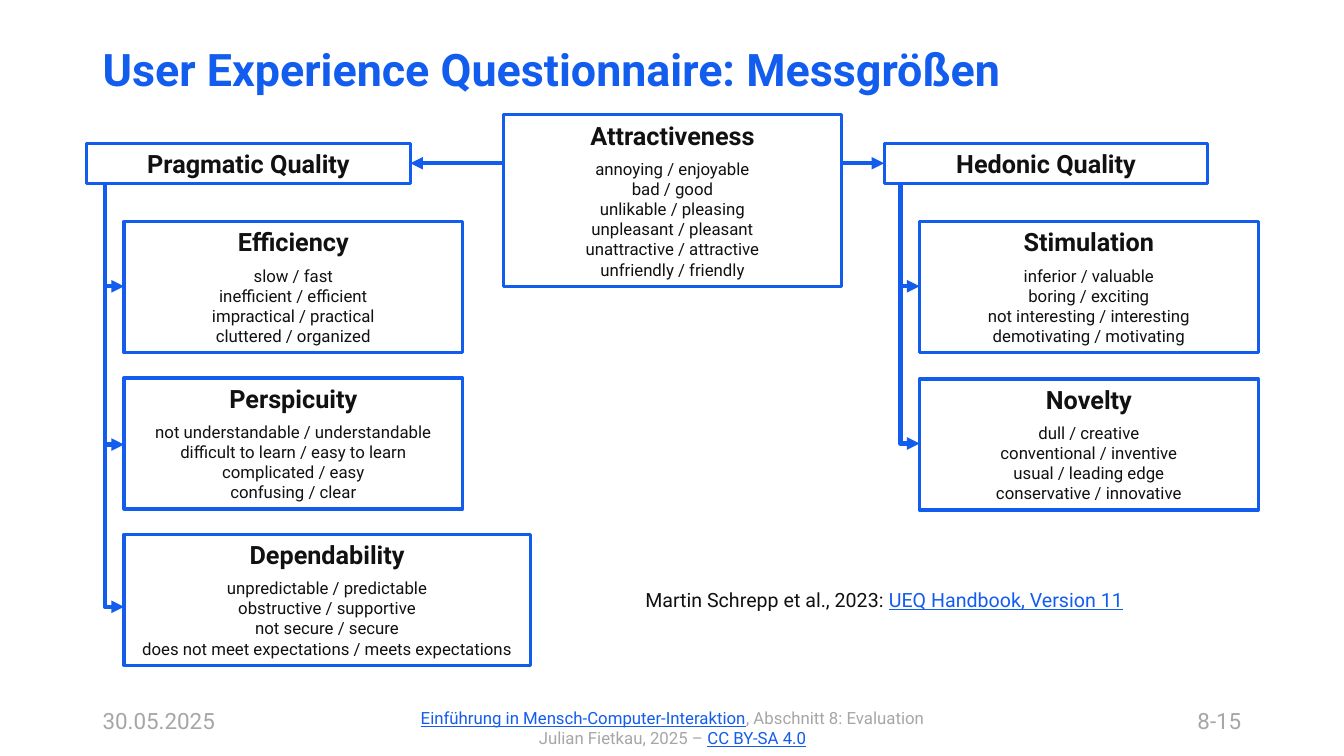
from lxml import etree
from pptx import Presentation
from pptx.dml.color import RGBColor
from pptx.enum.shapes import MSO_CONNECTOR, MSO_SHAPE
from pptx.enum.text import MSO_ANCHOR, PP_ALIGN
from pptx.oxml.ns import qn
from pptx.util import Inches, Pt

RECT = MSO_SHAPE.RECTANGLE
LINE, ELBOW = MSO_CONNECTOR.STRAIGHT, MSO_CONNECTOR.ELBOW
TOP, MIDDLE = MSO_ANCHOR.TOP, MSO_ANCHOR.MIDDLE
LEFT, CENTER, RIGHT = PP_ALIGN.LEFT, PP_ALIGN.CENTER, PP_ALIGN.RIGHT
COLORS = {
    name: RGBColor.from_string(code)
    for name, code in {
        "blue": "125CEE", "ink": "111111", "gray": "A6A6A6", "white": "FFFFFF",
    }.items()
}

prs = Presentation()
prs.slide_width, prs.slide_height = Inches(13.33), Inches(7.5)
slide = prs.slides.add_slide(prs.slide_layouts[6])
shapes = slide.shapes


def style(run, size, color, bold=False):
    run.font.name = "Roboto"
    run.font.size = Pt(size)
    run.font.bold = bold
    run.font.color.rgb = COLORS[color]


def arrow(link):
    link.line.color.rgb = COLORS["blue"]
    link.line.width = Pt(3)
    props = link._element.spPr
    tail = etree.SubElement(props.find(qn("a:ln")), qn("a:tailEnd"))
    tail.set("type", "triangle")
    etree.SubElement(props, qn("a:effectLst"))


texts = [
    ((2.66, 6.97, 8.02, 0.5), CENTER, TOP, 12, "gray", [
        [("Einführung in Mensch-Computer-Interaktion", True),
         (", Abschnitt 8: Evaluation", False)],
        [("Julian Fietkau, 2025 – ", False), ("CC BY-SA 4.0", True)]]),
    ((0.92, 6.97, 1.74, 0.37), LEFT, TOP, 16, "gray", [[("30.05.2025", False)]]),
    ((9.1, 6.97, 3.31, 0.37), RIGHT, TOP, 16, "gray", [[("8-15", False)]]),
    ((0.92, 0.37, 11.5, 0.68), LEFT, MIDDLE, 32, "blue", [
        [("User Experience Questionnaire: Messgrößen", False)]]),
    ((5.65, 5.78, 6.24, 0.34), CENTER, TOP, 14, "ink", [
        [("Martin Schrepp et al., 2023: ", False),
         ("UEQ Handbook, Version 11", True)]]),
]
for place, align, anchor, size, color, lines in texts:
    frame = shapes.add_textbox(*map(Inches, place)).text_frame
    frame.word_wrap = True
    frame.vertical_anchor = anchor
    frame.text = "\n".join("" for line in lines)
    for para, line in zip(frame.paragraphs, lines):
        para.alignment = align
        if size == 32:
            para.line_spacing = 0.9
        for words, linked in line:
            run = para.add_run()
            run.text = words
            style(run, size, "blue" if linked else color, size == 32)
            if linked:
                run.font.underline = True

scales = [
    ("Attractiveness", (4.99, 1.14, 3.36, 1.7), [
        "annoying / enjoyable", "bad / good", "unlikable / pleasing",
        "unpleasant / pleasant", "unattractive / attractive",
        "unfriendly / friendly"]),
    ("Pragmatic Quality", (0.86, 1.42, 3.21, 0.4), []),
    ("Hedonic Quality", (8.77, 1.42, 3.21, 0.4), []),
    ("Efficiency", (1.23, 2.2, 3.36, 1.3), [
        "slow / fast", "inefficient / efficient", "impractical / practical",
        "cluttered / organized"]),
    ("Perspicuity", (1.23, 3.75, 3.36, 1.3), [
        "not understandable / understandable",
        "difficult to learn / easy to learn", "complicated / easy",
        "confusing / clear"]),
    ("Dependability", (1.23, 5.3, 4.03, 1.3), [
        "unpredictable / predictable", "obstructive / supportive",
        "not secure / secure",
        "does not meet expectations / meets expectations"]),
    ("Stimulation", (9.12, 2.2, 3.36, 1.3), [
        "inferior / valuable", "boring / exciting",
        "not interesting / interesting", "demotivating / motivating"]),
    ("Novelty", (9.12, 3.76, 3.36, 1.3), [
        "dull / creative", "conventional / inventive",
        "usual / leading edge", "conservative / innovative"]),
]
boxes = {}
for name, place, pairs in scales:
    box = boxes[name] = shapes.add_shape(RECT, *map(Inches, place))
    box.shadow.inherit = False
    box.fill.solid()
    box.fill.fore_color.rgb = COLORS["white"]
    box.line.color.rgb = COLORS["blue"]
    box.line.width = Pt(2.25)
    frame = box.text_frame
    frame.word_wrap = True
    frame.vertical_anchor = TOP
    frame.text = "\n".join([name, *pairs])
    for i, para in enumerate(frame.paragraphs):
        para.alignment = CENTER
        style(para.runs[0], 12 if i else 18, "ink", i == 0)
    frame.paragraphs[0].space_after = Pt(6)

for start, name, side in [(4.99, "Pragmatic Quality", 3),
                          (8.35, "Hedonic Quality", 1)]:
    y = Inches(1.62)
    link = shapes.add_connector(LINE, Inches(start), y, Inches(start), y)
    link.end_connect(boxes[name], side)
    arrow(link)

for trunk, name, y in [
    (1.04, "Efficiency", 2.84), (1.04, "Perspicuity", 4.41),
    (1.04, "Dependability", 6.02),
    (8.93, "Stimulation", 2.84), (8.93, "Novelty", 4.4),
]:
    x, top, end = Inches(trunk), Inches(1.82), Inches(y)
    wide, tall = boxes[name].left - x, end - top
    link = shapes.add_connector(ELBOW, x, top, boxes[name].left, end)
    link.left = x + (wide - tall) // 2
    link.top = top + (tall - wide) // 2
    link.width, link.height = tall, wide
    props = link._element.spPr
    turn = props.find(qn("a:xfrm"))
    turn.set("rot", "16200000")
    turn.set("flipH", "1")
    props.find(qn("a:prstGeom")).set("prst", "bentConnector2")
    arrow(link)

prs.save("out.pptx")
